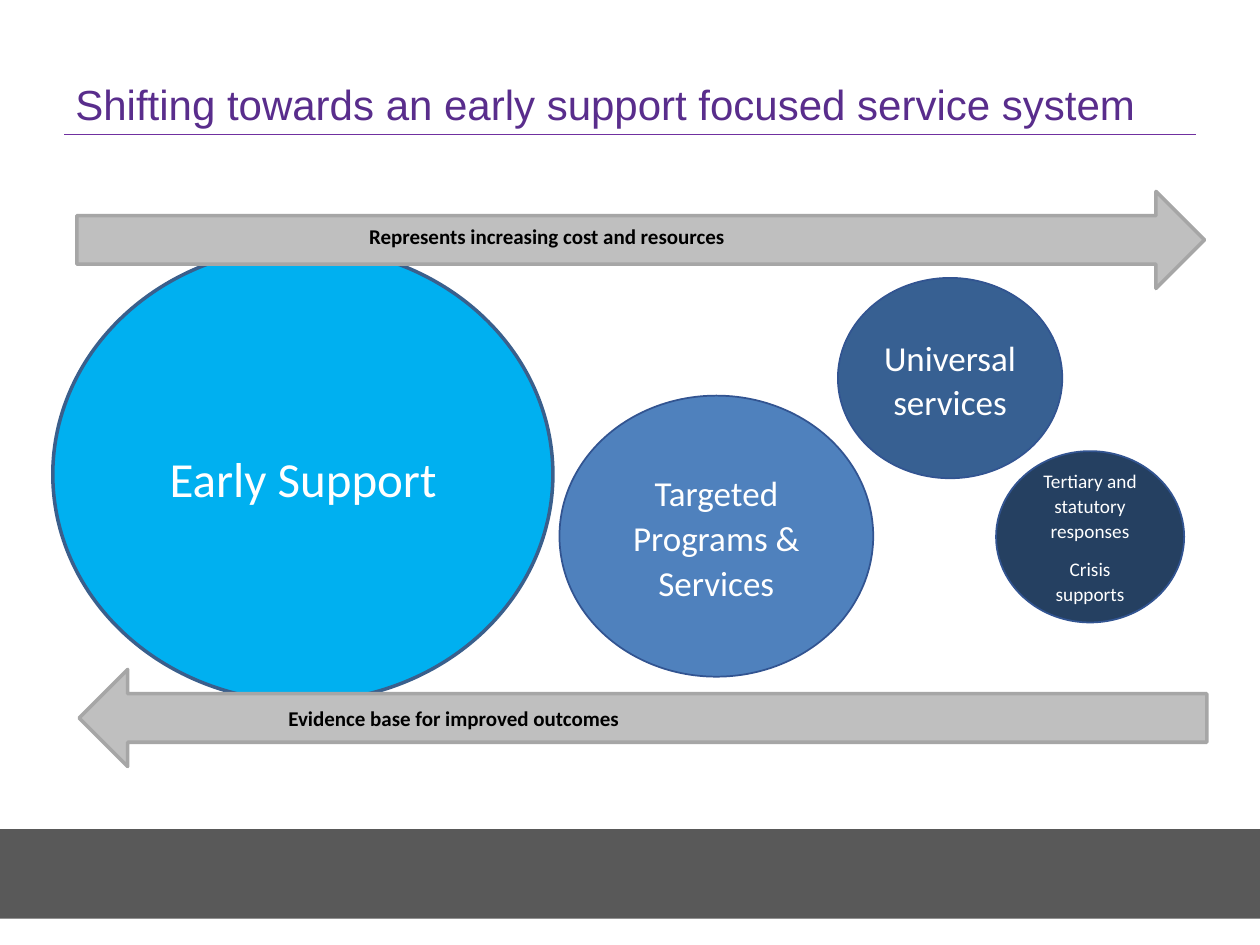
from dataclasses import dataclass

from lxml.etree import SubElement
from pptx import Presentation
from pptx.dml.color import RGBColor
from pptx.enum.shapes import MSO_CONNECTOR, MSO_SHAPE
from pptx.enum.text import MSO_ANCHOR, PP_ALIGN
from pptx.oxml.ns import qn
from pptx.util import Pt


@dataclass(frozen=True)
class Theme:
    heading_font: str = "Arial"
    body_font: str = "Calibri"
    heading: str = "592D8C"
    rule: str = "7030A0"
    footer: str = "595959"
    arrow: str = "BFBFBF"
    arrow_edge: str = "A6A6A6"
    early: str = "00B0F0"
    early_edge: str = "3A5F8C"
    targeted: str = "4F81BD"
    universal: str = "376092"
    tertiary: str = "254061"
    circle_edge: str = "325491"
    light: str = "FFFFFF"
    dark: str = "000000"
    title_size: int = 24
    lead_size: int = 28
    circle_size: int = 20
    small_size: int = 11
    label_size: int = 12


class SlideBuilder:
    def __init__(self, page, theme):
        self.page = page
        self.theme = theme

    def shape(self, kind, bounds, fill, edge=None, width=1):
        shape = self.page.shapes.add_shape(kind, *map(Pt, bounds))
        shape.shadow.inherit = False
        shape.fill.solid()
        shape.fill.fore_color.rgb = RGBColor.from_string(fill)
        if edge:
            shape.line.color.rgb = RGBColor.from_string(edge)
            shape.line.width = Pt(width)
        else:
            shape.line.fill.background()
        return shape

    def fill_text(self, frame, lines, size, color, align=PP_ALIGN.LEFT, bold=False):
        frame.word_wrap = True
        for index, line in enumerate(lines):
            para = frame.paragraphs[0] if index == 0 else frame.add_paragraph()
            para.text = line
            para.alignment = align
            para.line_spacing = 1.07
            para.space_after = Pt(8)
            para.font.name = self.theme.body_font
            para.font.size = Pt(size)
            para.font.bold = bold
            para.font.color.rgb = RGBColor.from_string(color)

    def title(self, text, bounds):
        frame = self.page.shapes.add_textbox(*map(Pt, bounds)).text_frame
        frame.word_wrap = True
        frame.vertical_anchor = MSO_ANCHOR.BOTTOM
        para = frame.paragraphs[0]
        para.text = text
        para.font.name = self.theme.heading_font
        para.font.size = Pt(self.theme.title_size)
        para.font.color.rgb = RGBColor.from_string(self.theme.heading)

    def label(self, text, bounds, size, color, **style):
        box = self.page.shapes.add_textbox(*map(Pt, bounds))
        self.fill_text(box.text_frame, [text], size, color, **style)

    def circle(self, lines, bounds, fill, size):
        shape = self.shape(MSO_SHAPE.OVAL, bounds, fill, self.theme.circle_edge)
        shape.text_frame.vertical_anchor = MSO_ANCHOR.MIDDLE
        self.fill_text(shape.text_frame, lines, size, self.theme.light, PP_ALIGN.CENTER)

    def arrow(self, left, top, rotation=0):
        shape = self.shape(MSO_SHAPE.RIGHT_ARROW, (left, top, 644.4, 55.5),
                           self.theme.arrow, self.theme.arrow_edge, 2)
        shape.rotation = rotation

    def rule(self, left, right, y):
        line = self.page.shapes.add_connector(
            MSO_CONNECTOR.STRAIGHT, Pt(left), Pt(y), Pt(right), Pt(y))
        line.line.color.rgb = RGBColor.from_string(self.theme.rule)
        line.line.width = Pt(0.75)
        SubElement(line._element.spPr, qn("a:effectLst"))


def main():
    deck = Presentation()
    deck.slide_width, deck.slide_height = Pt(720), Pt(540)
    theme = Theme()
    slide = SlideBuilder(deck.slides.add_slide(deck.slide_layouts[6]), theme)

    # Footer band, heading rule, early support circle and heading
    slide.shape(MSO_SHAPE.RECTANGLE, (-14.4, 473.8, 753.8, 51.1), theme.footer)
    slide.rule(36.7, 683.3, 77)
    slide.shape(MSO_SHAPE.OVAL, (30.2, 141.1, 285.8, 259.9),
                theme.early, theme.early_edge, 2)
    slide.title("Shifting towards an early support focused service system",
                (36, 21.6, 648, 55.4))

    # Arrows and service circles
    slide.arrow(45.2, 382.5, rotation=180)
    slide.circle(["Targeted Programs & Services"], (319.7, 226.1, 179.3, 160.6),
                 theme.targeted, theme.circle_size)
    slide.circle(["Universal services"], (478.8, 158.8, 128.2, 114.5),
                 theme.universal, theme.circle_size)
    slide.arrow(43.9, 109.4)
    slide.circle(["Tertiary and statutory responses", "Crisis supports"],
                 (569.2, 257.8, 107.5, 97.9), theme.tertiary, theme.small_size)

    # Labels
    slide.label("Represents increasing cost and resources",
                (203.8, 123.1, 347.8, 28.1), theme.label_size, theme.dark, bold=True)
    slide.label("\tEvidence base for improved outcomes",
                (121.7, 398.9, 368.6, 28.1), theme.label_size, theme.dark, bold=True)
    slide.label("Early Support", (79.9, 250.6, 186.5, 38.9),
                theme.lead_size, theme.light, align=PP_ALIGN.CENTER)

    deck.save("out.pptx")


if __name__ == "__main__":
    main()
